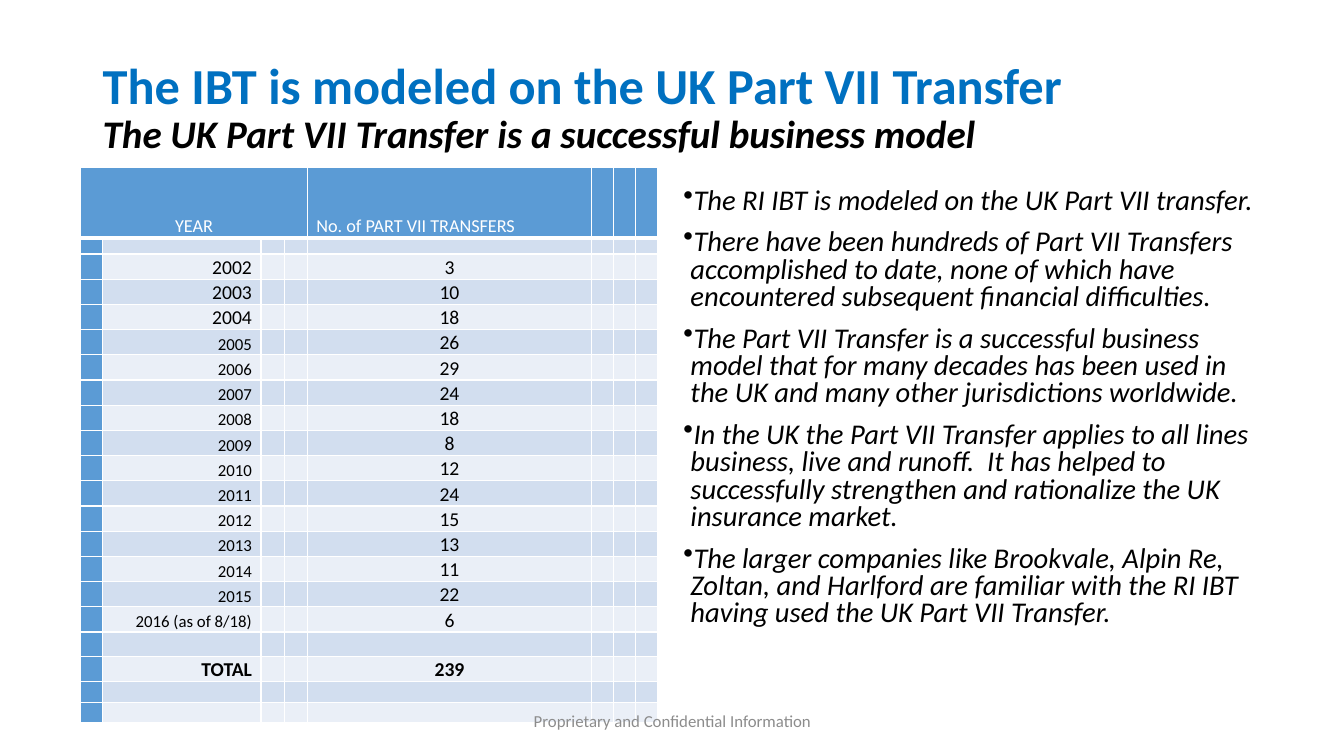
from lxml import etree
from pptx import Presentation
from pptx import util as u
from pptx.dml.color import RGBColor
from pptx.enum import text
from pptx.oxml import ns


def paint(target, color):
    if hasattr(target, "solid"):
        target.solid()
        target.fore_color.rgb = RGBColor.from_string(color)
    else:
        target.color.rgb = RGBColor.from_string(color)


def style(font, size, color, bold=False, italic=False):
    font.name = "Calibri"
    font.size = u.Pt(size)
    font.bold = bold
    font.italic = italic
    paint(font, color)


deck = Presentation()
deck.slide_width = u.Inches(13.33)
deck.slide_height = u.Inches(7.5)
page = deck.slides.add_slide(deck.slide_layouts[6])

title = page.shapes.add_textbox(u.Inches(0.92), u.Inches(0.58), u.Inches(11.78), u.Inches(1))
title.text_frame.word_wrap = True
title.text_frame.vertical_anchor = text.MSO_ANCHOR.MIDDLE
para = title.text_frame.paragraphs[0]
para.line_spacing = 0.9
span = para.add_run()
span.text = "The IBT is modeled on the UK Part VII Transfer"
style(span.font, 36, "0070C0", bold=True)
para.add_line_break()
span = para.add_run()
span.text = "The UK Part VII Transfer is a successful business model"
style(span.font, 27.9, "000000", bold=True, italic=True)

transfers = [3, 10, 18, 26, 29, 24, 18, 8, 12, 24, 15, 13, 11, 22, 6]
widths = [0.14, 1.57, 0.23, 0.23, 2.82, 0.22, 0.2, 0.22]
heights = [0.7, 0.16] + [0.25] * len(transfers) + [0.24, 0.25, 0.21, 0.2]
header_row, first_year_row, total_row = 0, 2, len(heights) - 3
label_column, count_column = 1, 4

entries = {
    (header_row, 0): ("YEAR", 13, text.PP_ALIGN.CENTER),
    (header_row, count_column): ("No. of PART VII TRANSFERS", 13, text.PP_ALIGN.LEFT),
    (total_row, label_column): ("TOTAL", 14, text.PP_ALIGN.RIGHT),
    (total_row, count_column): (str(sum(transfers)), 14, text.PP_ALIGN.CENTER),
}
for index, count in enumerate(transfers):
    year = 2002 + index
    label = "2016 (as of 8/18)" if year == 2016 else str(year)
    row = first_year_row + index
    entries[row, label_column] = (label, 14 if year < 2005 else 12, text.PP_ALIGN.RIGHT)
    entries[row, count_column] = (str(count), 14, text.PP_ALIGN.CENTER)

table = page.shapes.add_table(
    len(heights), len(widths), u.Inches(0.8), u.Inches(1.66),
    u.Inches(sum(widths)), u.Inches(sum(heights))).table
table.first_row = False
table.horz_banding = False
for column, width in zip(table.columns, widths):
    column.width = u.Inches(width)
for row, height in zip(table.rows, heights):
    row.height = u.Inches(height)
table.cell(header_row, 0).merge(table.cell(header_row, 3))

for row in range(len(heights)):
    for column in range(len(widths)):
        cell = table.cell(row, column)
        cell.margin_left = cell.margin_right = u.Inches(0.09)
        cell.margin_top = cell.margin_bottom = 0
        cell.vertical_anchor = text.MSO_ANCHOR.BOTTOM
        para = cell.text_frame.paragraphs[0]
        if (row, column) in entries:
            words, size, align = entries[row, column]
            para.text = words
            para.alignment = align
            para.line_spacing = 1.07
            color = "FFFFFF" if row == header_row else "000000"
            style(para.font, size, color, bold=row == total_row)
        else:
            etree.SubElement(para._p, ns.qn("a:endParaRPr"), sz="800")
        for side in ("lnL", "lnR", "lnT", "lnB"):
            points = 3 if row == header_row and side == "lnB" else 1
            edge = etree.SubElement(cell._tc.get_or_add_tcPr(), ns.qn("a:" + side), w=str(u.Pt(points)))
            fill = etree.SubElement(edge, ns.qn("a:solidFill"))
            etree.SubElement(fill, ns.qn("a:srgbClr"), val="FFFFFF")
        if row == header_row or column == 0:
            paint(cell.fill, "5B9BD5")
        else:
            paint(cell.fill, "D2DEEF" if row % 2 else "EAEFF7")

points = [
    "The RI IBT is modeled on the UK Part VII transfer.",
    "There have been hundreds of Part VII Transfers accomplished to date, none of which have "
    "encountered subsequent financial difficulties.",
    "The Part VII Transfer is a successful business model that for many decades has been used in "
    "the UK and many other jurisdictions worldwide.",
    "In the UK the Part VII Transfer applies to all lines business, live and runoff.  It has helped to "
    "successfully strengthen and rationalize the UK insurance market.",
    "The larger companies like Brookvale, Alpin Re, Zoltan, and Harlford are familiar with the RI IBT "
    "having used the UK Part VII Transfer.",
]
body = page.shapes.add_textbox(u.Inches(6.68), u.Inches(1.82), u.Inches(5.94), u.Inches(4.94))
body.text_frame.word_wrap = True
for index, point in enumerate(points):
    para = body.text_frame.add_paragraph() if index else body.text_frame.paragraphs[0]
    para.text = point
    para.line_spacing = 0.8
    para.space_before = u.Pt(10)
    style(para.font, 20.4, "000000", italic=True)
    properties = para._p.get_or_add_pPr()
    properties.set("marL", str(u.Inches(0.07)))
    properties.set("indent", str(u.Inches(-0.38)))
    bullet = etree.Element(ns.qn("a:buChar"), char="•")
    properties.find(ns.qn("a:defRPr")).addprevious(bullet)

footer = page.shapes.add_textbox(u.Inches(4.42), u.Inches(6.95), u.Inches(4.5), u.Inches(0.4))
footer.text_frame.word_wrap = True
footer.text_frame.vertical_anchor = text.MSO_ANCHOR.MIDDLE
para = footer.text_frame.paragraphs[0]
para.text = "Proprietary and Confidential Information"
para.alignment = text.PP_ALIGN.CENTER
style(para.font, 12, "8C8C8C")

deck.save("out.pptx")
